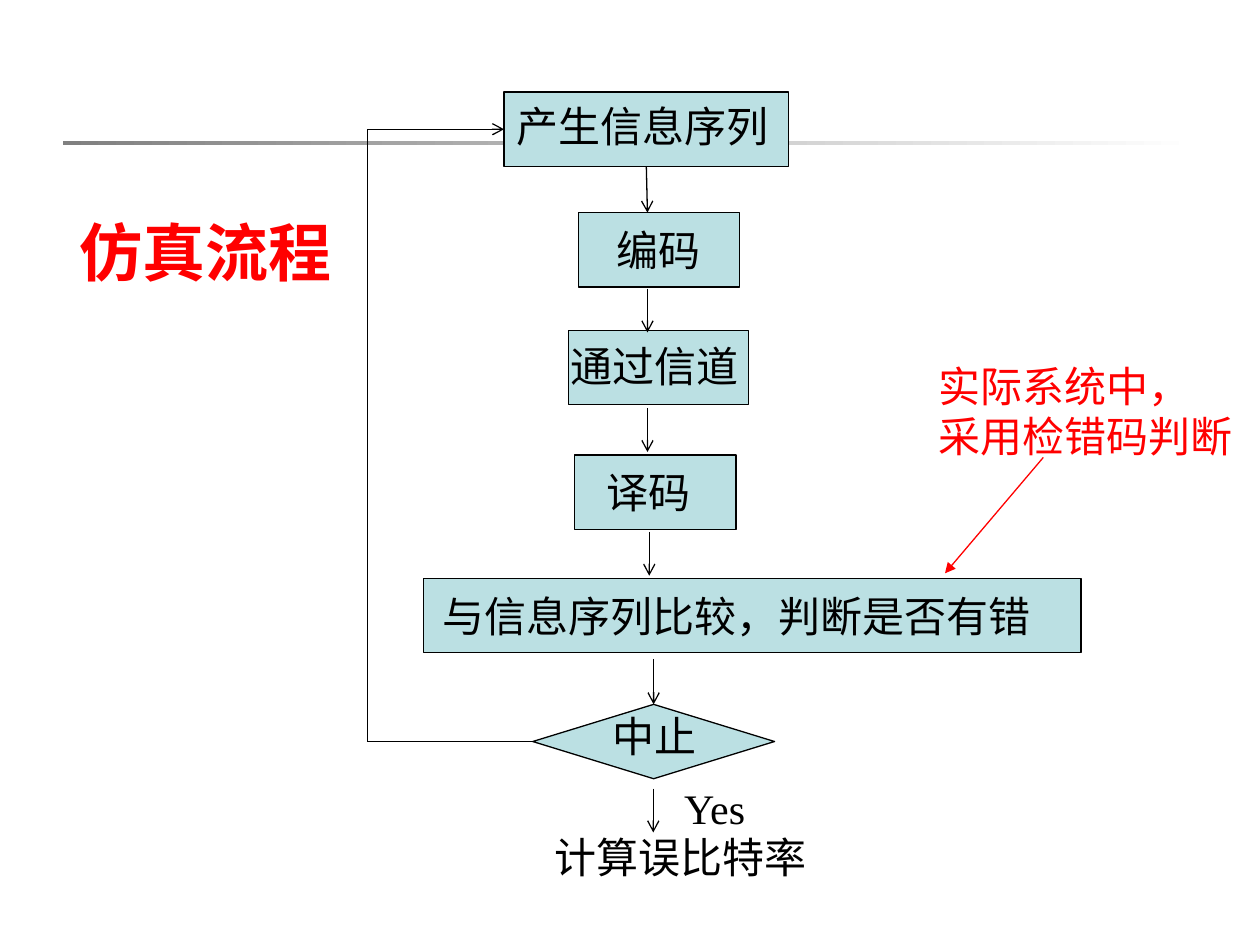
"""Builds the simulation flowchart slide."""
from pptx import Presentation
from pptx.dml.color import RGBColor
from pptx.enum.shapes import MSO_CONNECTOR, MSO_SHAPE
from pptx.enum.text import MSO_ANCHOR, MSO_AUTO_SIZE, PP_ALIGN
from pptx.oxml.ns import qn
from pptx.util import Pt
from lxml.etree import SubElement

BLACK = RGBColor(0x00, 0x00, 0x00)
RED = RGBColor(0xFF, 0x00, 0x00)
PALE_TEAL = RGBColor(0xBB, 0xE0, 0xE3)
GRAY = RGBColor(0x80, 0x80, 0x80)
WHITE = RGBColor(0xFF, 0xFF, 0xFF)
STEP_HEIGHT = 42.5

presentation = Presentation()
presentation.slide_width, presentation.slide_height = Pt(720), Pt(540)
slide = presentation.slides.add_slide(presentation.slide_layouts[5])
shapes = slide.shapes


def add_label(text, left, top, width, height=28.8, color=BLACK, inset_x=0, inset_y=0):
    box = shapes.add_textbox(Pt(left), Pt(top), Pt(width), Pt(height))
    frame = box.text_frame
    frame.margin_left = frame.margin_right = Pt(inset_x)
    frame.margin_top = frame.margin_bottom = Pt(inset_y)
    frame.word_wrap = False
    frame.auto_size = MSO_AUTO_SIZE.SHAPE_TO_FIT_TEXT
    frame.text = text
    for paragraph in frame.paragraphs:
        paragraph.font.size = Pt(24)
        paragraph.font.name = "Times New Roman"
        paragraph.font.color.rgb = color


def add_line(x1, y1, x2, y2, head=None, color=BLACK):
    line = shapes.add_connector(MSO_CONNECTOR.STRAIGHT, Pt(x1), Pt(y1), Pt(x2), Pt(y2))
    line.line.color.rgb = color
    line.line.width = Pt(0.75)
    if head:
        SubElement(line.line._get_or_add_ln(), qn("a:tailEnd"), type=head)
    SubElement(line._element.spPr, qn("a:effectLst"))
    return line


title = shapes.title
title.left, title.top, title.width, title.height = Pt(14.4), Pt(116.6), Pt(206.6), Pt(54)
title.text_frame.text = "仿真流程"
title.text_frame.auto_size = MSO_AUTO_SIZE.NONE
title.text_frame.vertical_anchor = MSO_ANCHOR.MIDDLE
heading = title.text_frame.paragraphs[0]
heading.alignment = PP_ALIGN.CENTER
heading.font.size = Pt(36)
heading.font.name = "Arial"
heading.font.bold = True
heading.font.color.rgb = RED

divider = shapes.add_shape(MSO_SHAPE.RECTANGLE, Pt(36), Pt(80.6), Pt(648), Pt(2.2))
divider.shadow.inherit = False
divider.line.fill.background()
divider.fill.gradient()
divider.fill.gradient_angle = 0
for stop, color in zip(divider.fill.gradient_stops, (GRAY, WHITE)):
    stop.color.rgb = color

steps = [
    ("产生信息序列", MSO_SHAPE.RECTANGLE, 288, 52.6, 162.7, 295.2, 57.6, 144),
    ("编码", MSO_SHAPE.RECTANGLE, 330.5, 121.5, 92.2, 352.1, 128.2, 48),
    ("通过信道", MSO_SHAPE.RECTANGLE, 324.7, 188.7, 103, 326.2, 194.4, 96),
    ("译码", MSO_SHAPE.RECTANGLE, 328.4, 260, 92.2, 346.5, 266.4, 48),
    ("与信息序列比较，判断是否有错", MSO_SHAPE.RECTANGLE, 242, 330.5, 375.8, 252.7, 337.7, 336),
    ("中止", MSO_SHAPE.FLOWCHART_DECISION, 304.4, 402.5, 138.2, 350, 406.1, 48),
]
nodes = []
for text, outline, left, top, width, text_left, text_top, text_width in steps:
    node = shapes.add_shape(outline, Pt(left), Pt(top), Pt(width), Pt(STEP_HEIGHT))
    node.shadow.inherit = False
    node.fill.solid()
    node.fill.fore_color.rgb = PALE_TEAL
    node.line.color.rgb = BLACK
    node.line.width = Pt(0.75)
    nodes.append(node)
    add_label(text, text_left, text_top, text_width)
first_step, stop_decision = nodes[0], nodes[-1]

add_label("计算误比特率", 316.8, 475.2, 144)
add_label("Yes", 383.8, 443.5, 51.8, height=36, inset_x=7.2, inset_y=3.6)
add_label("实际系统中，\n采用检错码判断", 529.2, 202.3, 182.2, height=64.8,
          color=RED, inset_x=7.2, inset_y=3.6)

flow_arrows = [
    add_line(x, y, x, y + 25, head="arrow")
    for x, y in [(370, 96.5), (370, 165), (370, 233.3), (371, 304), (373.5, 376.5), (373.3, 450.7)]
]
flow_arrows[0].begin_connect(first_step, 2)
flow_arrows[4].end_connect(stop_decision, 0)

loop_x, loop_top, loop_bottom = 210.2, 73.85, 423.75
loop_out = add_line(loop_x, loop_bottom, 304.4, loop_bottom)
loop_out.end_connect(stop_decision, 1)
add_line(loop_x, loop_bottom, loop_x, loop_top)
loop_back = add_line(loop_x, loop_top, 288, loop_top, head="arrow")
loop_back.end_connect(first_step, 1)

add_line(596.2, 261.4, 540, 327.6, head="triangle", color=RED)

presentation.save("out.pptx")
